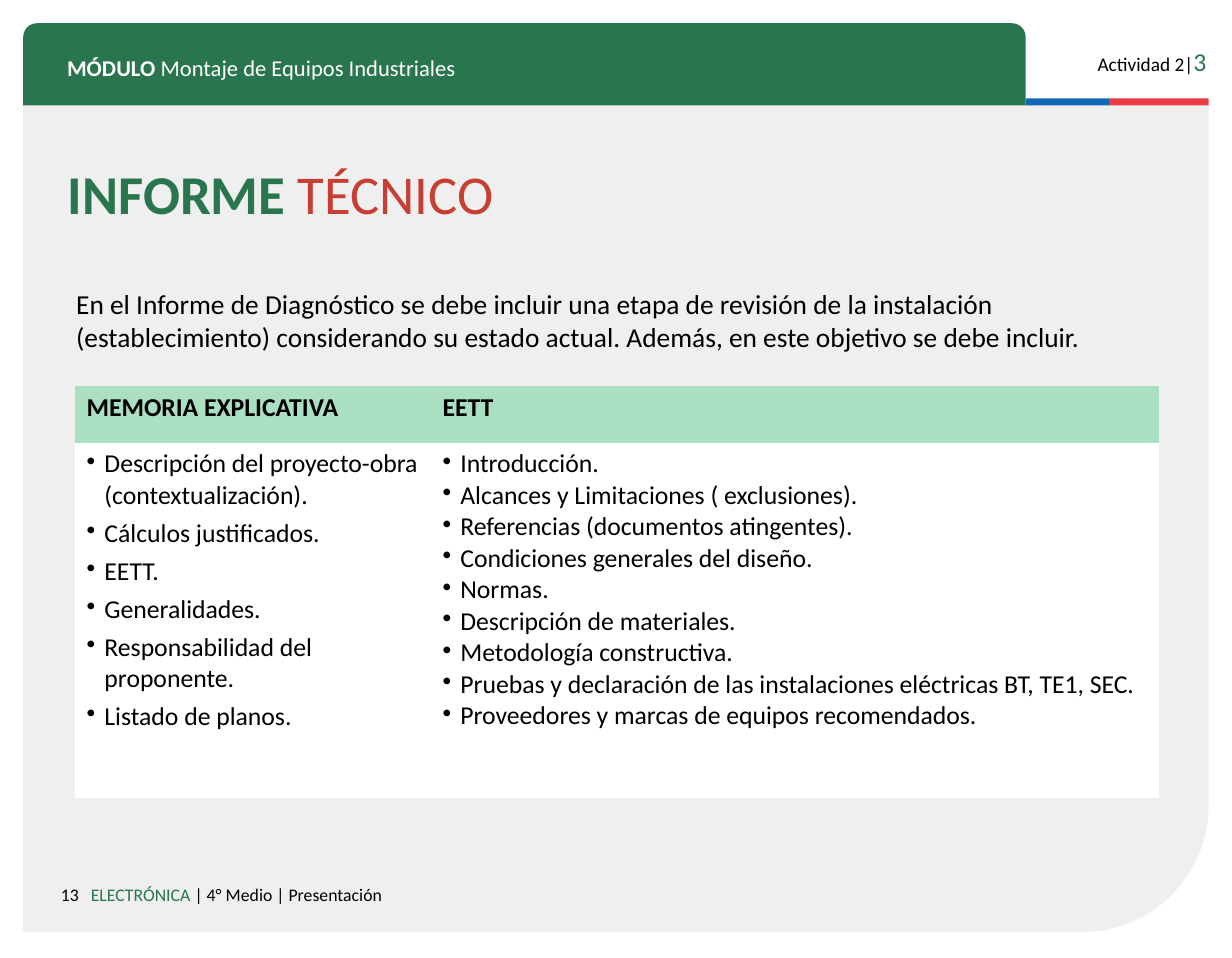
from lxml import etree
from pptx import Presentation
from pptx import util as u
from pptx.dml.color import RGBColor
from pptx.enum import shapes, text
from pptx.oxml import ns

FONT = "Calibri"
GREEN = RGBColor(0x29, 0x75, 0x4D)
MINT = RGBColor(0xAA, 0xE0, 0xC1)
GREY = RGBColor(0xEF, 0xEF, 0xEF)
BLUE = RGBColor(0x0F, 0x69, 0xB4)
RED = RGBColor(0xEB, 0x3C, 0x46)
BRICK = RGBColor(0xC7, 0x3E, 0x32)
BLACK = RGBColor(0, 0, 0)
WHITE = RGBColor(0xFF, 0xFF, 0xFF)

NO_STYLE_NO_GRID = "{2D5ABB26-0587-4C30-8999-92F81FD0307C}"
INDENT = u.Cm(0.39)
WIDE_INSET, NARROW_INSET = u.Cm(0.25), u.Cm(0.13)

INTRO = (
    "En el Informe de Diagnóstico se debe incluir una etapa de revisión de la "
    "instalación (establecimiento) considerando su estado actual. Además, en "
    "este objetivo se debe incluir."
)
COLUMNS = [
    ("MEMORIA EXPLICATIVA", 7.8, 4, [
        "Descripción del proyecto-obra (contextualización).",
        "Cálculos justificados.",
        "EETT.",
        "Generalidades.",
        "Responsabilidad del proponente.",
        "Listado de planos.",
    ]),
    ("EETT", 15.95, 0, [
        "Introducción.",
        "Alcances y Limitaciones ( exclusiones).",
        "Referencias (documentos atingentes).",
        "Condiciones generales del diseño.",
        "Normas.",
        "Descripción de materiales.",
        "Metodología constructiva.",
        "Pruebas y declaración de las instalaciones eléctricas BT, TE1, SEC.",
        "Proveedores y marcas de equipos recomendados.",
    ]),
]


def set_attributes(target, values):
    for name, value in values.items():
        setattr(target, name, value)


def place(shape, left, top, width, height):
    lengths = {"left": left, "top": top, "width": width, "height": height}
    set_attributes(shape, {name: u.Cm(value) for name, value in lengths.items()})


def add_run(paragraph, words, size, color=BLACK, bold=False):
    run = paragraph.add_run()
    run.text = words
    set_attributes(run.font, {"name": FONT, "size": u.Pt(size), "bold": bold})
    run.font.color.rgb = color


def write_text(shape, runs, inset=WIDE_INSET, **paragraph_format):
    """Write one paragraph of (words, size, color, bold) runs, from the top."""
    frame = shape.text_frame
    set_attributes(frame, {
        "word_wrap": True,
        "auto_size": text.MSO_AUTO_SIZE.NONE,
        "vertical_anchor": text.MSO_ANCHOR.TOP,
        "margin_left": WIDE_INSET,
        "margin_right": WIDE_INSET,
        "margin_top": inset,
        "margin_bottom": inset,
    })
    paragraph = frame.paragraphs[0]
    set_attributes(paragraph, {"alignment": text.PP_ALIGN.LEFT, **paragraph_format})
    for run in runs:
        add_run(paragraph, *run)


def add_text(slide, box, runs, **options):
    write_text(slide.shapes.add_textbox(*map(u.Cm, box)), runs, **options)


def add_block(slide, kind, box, color, adjustments=()):
    shape = slide.shapes.add_shape(kind, *map(u.Cm, box))
    shape.shadow.inherit = False
    shape.fill.solid()
    shape.fill.fore_color.rgb = color
    shape.line.fill.background()
    for index, value in enumerate(adjustments):
        shape.adjustments[index] = value
    return shape


def add_bullet(paragraph):
    properties = paragraph._p.get_or_add_pPr()
    properties.set("marL", str(INDENT))
    properties.set("indent", str(-INDENT))
    etree.SubElement(properties, ns.qn("a:buChar")).set("char", "•")


def fill_cell(cell, color):
    cell.fill.solid()
    cell.fill.fore_color.rgb = color
    set_attributes(cell, {
        "margin_left": WIDE_INSET,
        "margin_right": WIDE_INSET,
        "margin_top": NARROW_INSET,
        "margin_bottom": NARROW_INSET,
    })


def add_contents_table(slide):
    width = sum(column[1] for column in COLUMNS)
    box = map(u.Cm, (1.65, 8.46, width, 9.04))
    table = slide.shapes.add_table(2, len(COLUMNS), *box).table
    table._tbl.tblPr.find(ns.qn("a:tableStyleId")).text = NO_STYLE_NO_GRID
    for row, height in zip(table.rows, (1.24, 7.8)):
        row.height = u.Cm(height)

    for index, (heading, width, gap, items) in enumerate(COLUMNS):
        table.columns[index].width = u.Cm(width)
        head, body = table.cell(0, index), table.cell(1, index)
        fill_cell(head, MINT)
        fill_cell(body, WHITE)
        add_run(head.text_frame.paragraphs[0], heading, 16, bold=True)
        frame = body.text_frame
        for number, item in enumerate(items):
            paragraph = frame.add_paragraph() if number else frame.paragraphs[0]
            paragraph.space_before = u.Pt(gap if number else 0)
            add_bullet(paragraph)
            add_run(paragraph, item, 16)


def add_background(slide):
    kinds = shapes.MSO_SHAPE
    panel = add_block(slide, kinds.ROUND_1_RECTANGLE,
                      (0.51, 2.29, 25.98, 18.14), GREY, [0.153])
    panel.rotation = 180
    panel._element.spPr.xfrm.set("flipH", "1")
    add_block(slide, kinds.RECTANGLE, (22.48, 2.16, 1.83, 0.15), BLUE)
    add_block(slide, kinds.RECTANGLE, (24.31, 2.16, 2.18, 0.15), RED)
    add_block(slide, kinds.ROUND_2_SAME_RECTANGLE,
              (0.51, 0.51, 21.97, 1.8), GREEN, [0.167, 0])


def add_header_and_footer(slide):
    right = text.PP_ALIGN.RIGHT
    add_text(slide, (1.22, 1.04, 20.68, 0.89), [
        ("MÓDULO ", 14, WHITE, True),
        ("Montaje de Equipos Industriales", 14, WHITE),
    ], line_spacing=0.8)
    add_text(slide, (23.44, 0.76, 3.25, 0.97),
             [("Actividad 2|", 12), ("3", 16, GREEN)], alignment=right)
    add_text(slide, (0.51, 19.13, 1.47, 0.74), [("13", 11)], alignment=right)
    add_text(slide, (1.74, 19.13, 18.15, 0.97), [
        ("ELECTRÓNICA ", 11, GREEN),
        ("| 4° Medio | Presentación", 11),
    ])


def main():
    presentation = Presentation()
    presentation.slide_width, presentation.slide_height = u.Cm(27), u.Cm(21)
    slide = presentation.slides.add_slide(presentation.slide_layouts[5])
    add_background(slide)
    add_header_and_footer(slide)

    title = slide.shapes.title
    place(title, 1.24, 3.38, 25.1, 1.68)
    write_text(title, [("INFORME ", 34, GREEN, True), ("TÉCNICO", 34, BRICK)],
               inset=NARROW_INSET)
    # The title comes first in the layout, so lift it above the grey panel.
    slide.shapes._spTree.append(title._element)

    add_text(slide, (1.42, 6.17, 23.04, 2.39), [(INTRO, 17)], inset=NARROW_INSET)
    add_contents_table(slide)
    presentation.save("out.pptx")


if __name__ == "__main__":
    main()
